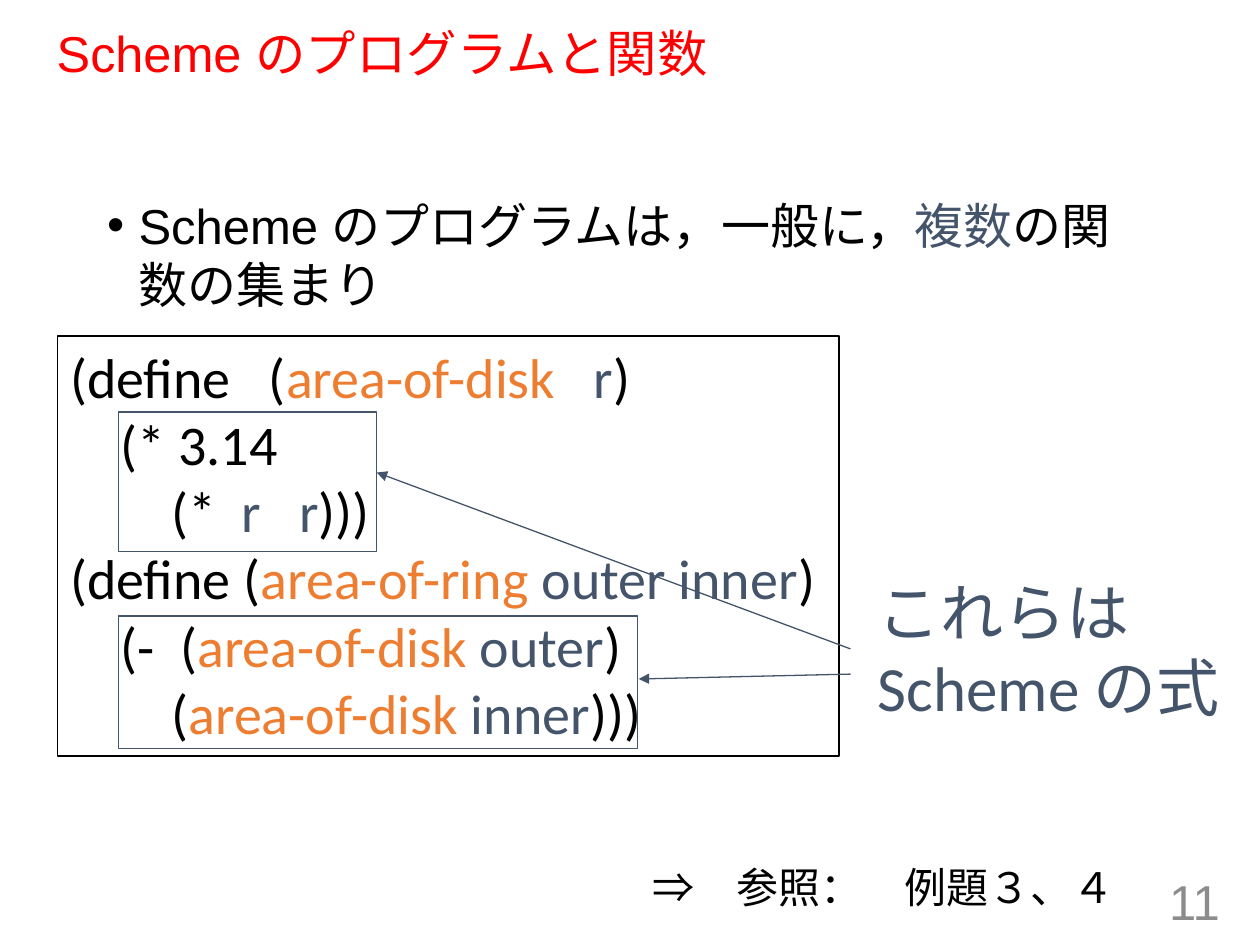
from lxml import etree
from pptx import Presentation
from pptx.dml.color import RGBColor
from pptx.enum import shapes, text
from pptx.oxml.ns import qn
from pptx.util import Pt

# Content: each paragraph is a list of (text, colour name) runs
TITLE = [[("Scheme のプログラムと関数", "title")]]
BODY = [[("Scheme のプログラムは，一般に，", "text"), ("複数", "accent"),
         ("の関数の集まり", "text")]]
CODE = [
    [("(define   (", "text"), ("area-of-disk   ", "name"), ("r", "accent"), (")", "text")],
    [("    (* 3.14", "text")],
    [("        (*  ", "text"), ("r   r", "accent"), (")))", "text")],
    [("(define (", "text"), ("area-of-ring ", "name"), ("outer inner", "accent"), (")", "text")],
    [("    (-  (", "text"), ("area-of-disk", "name"), (" outer", "accent"), (")", "text")],
    [("        (", "text"), ("area-of-disk ", "name"), ("inner", "accent"), (")))", "text")],
]
LABEL = [[("これらは", "accent")], [("Scheme の式", "accent")]]
REFERENCE = [[("⇒　参照：　例題３、４", "text")]]
NUMBER = [[("11", "muted")]]

THEME = {
    "colours": {"title": "FF0000", "text": "000000", "accent": "44546A",
                "name": "ED7D31", "muted": "8C8C8C"},
    "heading": "Arial", "plain": "Calibri", "line": 0.75,
    "sizes": {"title": 28.8, "body": 28, "code": 32, "label": 36,
              "reference": 24, "number": 28},
}

# Places in points: left, top, width, height
CODE_BOX = (33, 192, 446.5, 240)
EXPRESSION_BOXES = [(67.7, 235.4, 147.6, 80), (67.7, 352, 296.6, 75.6)]
ARROWS = [((486, 370.8), (215.3, 270)), ((486, 385.2), (365, 388))]


def colour(name):
    return RGBColor.from_string(THEME["colours"][name])


def write(shape, paragraphs, size, font, wrap=True, frame_format=(), **paragraph_format):
    frame = shape.text_frame
    settings = {"word_wrap": wrap, "auto_size": text.MSO_AUTO_SIZE.NONE,
                "vertical_anchor": text.MSO_ANCHOR.TOP, **dict(frame_format)}
    for key, value in settings.items():
        setattr(frame, key, value)
    settings = {"alignment": text.PP_ALIGN.LEFT, "space_before": Pt(0), **paragraph_format}
    for index, runs in enumerate(paragraphs):
        paragraph = frame.paragraphs[0] if index == 0 else frame.add_paragraph()
        for key, value in settings.items():
            setattr(paragraph, key, value)
        for words, name in runs:
            run = paragraph.add_run()
            run.text = words
            for key, value in {"size": Pt(THEME["sizes"][size]), "name": THEME[font]}.items():
                setattr(run.font, key, value)
            run.font.color.rgb = colour(name)


def place(shape, box):
    for key, value in zip(("left", "top", "width", "height"), box):
        setattr(shape, key, Pt(value))
    return shape


def outline(line, name):
    line.color.rgb = colour(name)
    line.width = Pt(THEME["line"])


def add_frame(slide, box, name):
    shape = slide.shapes.add_shape(shapes.MSO_SHAPE.RECTANGLE, *map(Pt, box))
    shape.shadow.inherit = False
    shape.fill.background()
    outline(shape.line, name)
    return shape


def add_arrow(slide, start, end):
    arrow = slide.shapes.add_connector(shapes.MSO_CONNECTOR.STRAIGHT,
                                       *map(Pt, start + end))
    outline(arrow.line, "accent")
    etree.SubElement(arrow.line._get_or_add_ln(), qn("a:tailEnd"), type="triangle")
    etree.SubElement(arrow._element.spPr, qn("a:effectLst"))


def add_text(slide, box):
    return slide.shapes.add_textbox(*map(Pt, box))


def main():
    presentation = Presentation()
    presentation.slide_width, presentation.slide_height = Pt(720), Pt(540)
    slide = presentation.slides.add_slide(presentation.slide_layouts[1])
    middle = {"vertical_anchor": text.MSO_ANCHOR.MIDDLE}

    # Title and bulleted statement
    title = place(slide.shapes.title, (25.2, 13.7, 666, 36.7))
    write(title, TITLE, "title", "heading", frame_format=middle, line_spacing=0.9)
    body = place(slide.placeholders[1], (54, 108, 612, 162))
    write(body, BODY, "body", "heading")
    properties = body.text_frame.paragraphs[0]._p.get_or_add_pPr()
    properties.set("marL", str(Pt(18)))
    properties.set("indent", str(-Pt(18)))
    etree.SubElement(properties, qn("a:buFont"), typeface="Arial")
    etree.SubElement(properties, qn("a:buChar"), char="•")

    # Program listing with its expressions framed
    write(add_frame(slide, CODE_BOX, "text"), CODE, "code", "plain", wrap=False)
    for box in EXPRESSION_BOXES:
        add_frame(slide, box, "accent")

    # Label pointing at both expressions
    write(add_text(slide, (494.6, 324, 211.7, 94.3)), LABEL, "label", "plain")
    for start, end in ARROWS:
        add_arrow(slide, start, end)

    # Reference and page number
    write(add_text(slide, (365.8, 488.9, 280.8, 36.7)), REFERENCE, "reference", "plain",
          wrap=False)
    write(add_text(slide, (542.2, 500.4, 162, 28.8)), NUMBER, "number", "heading",
          frame_format=middle, alignment=text.PP_ALIGN.RIGHT)

    presentation.save("out.pptx")


if __name__ == "__main__":
    main()
